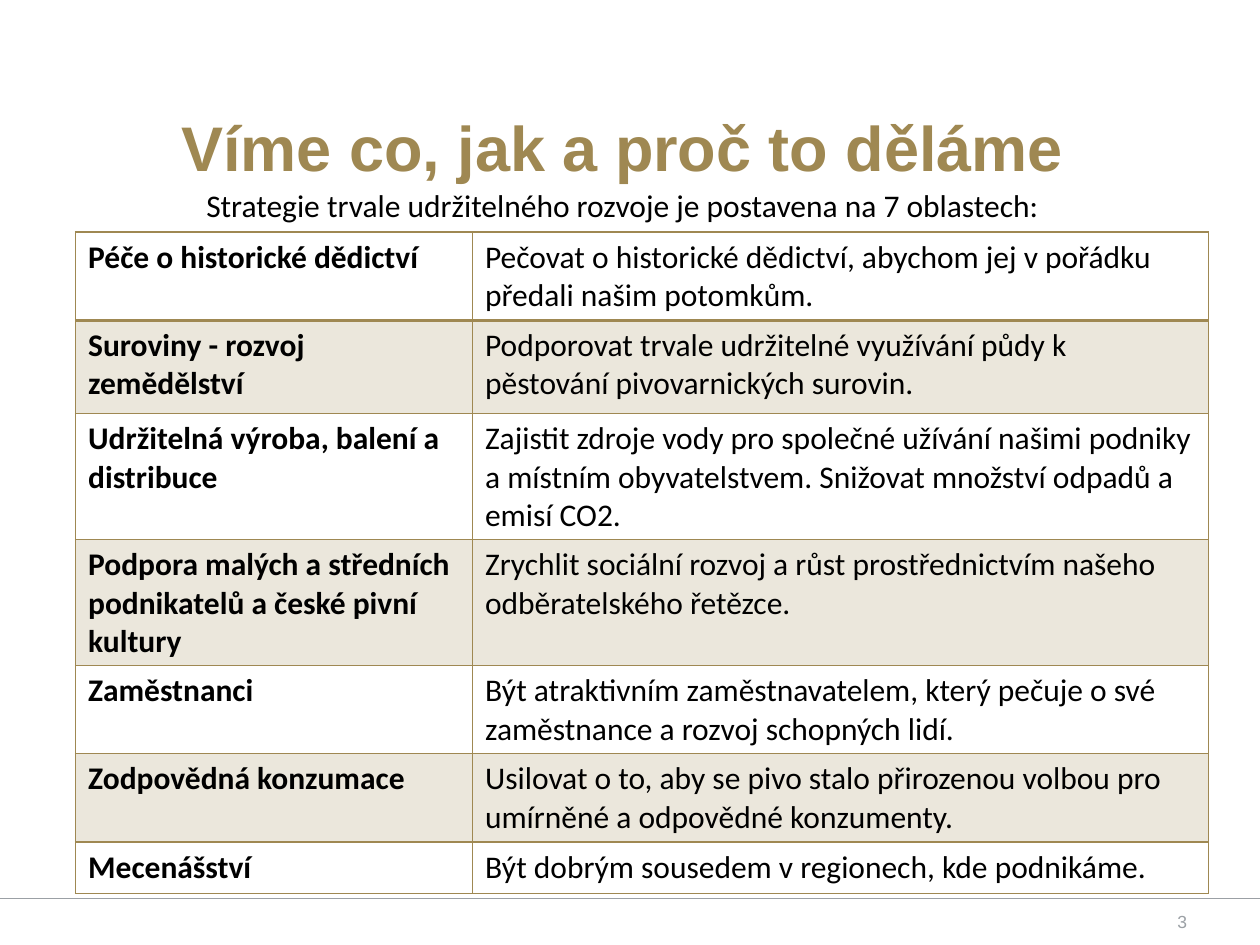
from lxml import etree
from pptx import Presentation
from pptx.dml.color import RGBColor
from pptx.enum.shapes import MSO_CONNECTOR
from pptx.enum.text import MSO_ANCHOR, PP_ALIGN
from pptx.oxml.ns import qn
from pptx.util import Inches, Pt

GOLD = RGBColor(0x9F, 0x88, 0x52)
GREY = RGBColor(0x9B, 0xA0, 0xA5)
BLACK = RGBColor(0x00, 0x00, 0x00)
TITLE_ONLY = 5
TOP, MIDDLE = MSO_ANCHOR.TOP, MSO_ANCHOR.MIDDLE
CENTER, RIGHT = PP_ALIGN.CENTER, PP_ALIGN.RIGHT
STRAIGHT = MSO_CONNECTOR.STRAIGHT

COLUMN_WIDTHS = (3.15, 5.84)
# Each row: height in inches, area, goal
AREAS = [
    (0.70, "Péče o historické dědictví",
     "Pečovat o historické dědictví, abychom jej v pořádku předali našim potomkům."),
    (0.74, "Suroviny - rozvoj zemědělství",
     "Podporovat trvale udržitelné využívání půdy k pěstování pivovarnických surovin."),
    (1.00, "Udržitelná výroba, balení a distribuce",
     "Zajistit zdroje vody pro společné užívání našimi podniky a místním obyvatelstvem. "
     "Snižovat množství odpadů a emisí CO2."),
    (1.00, "Podpora malých a středních podnikatelů a české pivní kultury",
     "Zrychlit sociální rozvoj a růst prostřednictvím našeho odběratelského řetězce."),
    (0.70, "Zaměstnanci",
     "Být atraktivním zaměstnavatelem, který pečuje o své zaměstnance a rozvoj schopných lidí."),
    (0.70, "Zodpovědná konzumace",
     "Usilovat o to, aby se pivo stalo přirozenou volbou pro umírněné a odpovědné konzumenty."),
    (0.41, "Mecenášství",
     "Být dobrým sousedem v regionech, kde podnikáme."),
]


def write(frame, text, size, font, color, bold=False, align=None):
    frame.word_wrap = True
    frame.text = text
    paragraph = frame.paragraphs[0]
    paragraph.alignment = align
    run_font = paragraph.runs[0].font
    run_font.size, run_font.name, run_font.bold = Pt(size), font, bold
    run_font.color.rgb = color


def add_title(slide, left, top, width, height):
    title = slide.shapes.title
    title.left, title.top, title.width, title.height = left, top, width, height
    frame = title.text_frame
    frame.vertical_anchor = TOP
    frame.margin_top = Inches(0.1)
    write(frame, "Víme co, jak a proč to děláme ", 36, "Arial", GOLD, True, CENTER)


def add_intro(slide, left, top, width, height):
    intro = slide.shapes.add_textbox(left, top, width, height)
    write(intro.text_frame,
          "Strategie trvale udržitelného rozvoje je postavena na 7 oblastech: ",
          18, "Calibri", BLACK, align=CENTER)


def set_borders(cell, bottom_width):
    """Draw gold lines on all sides; call before setting the fill."""
    properties = cell._tc.get_or_add_tcPr()
    for side, width in (("L", 1), ("R", 1), ("T", 1), ("B", bottom_width)):
        line = etree.SubElement(properties, qn(f"a:ln{side}"), w=str(Pt(width)))
        fill = etree.SubElement(line, qn("a:solidFill"))
        etree.SubElement(fill, qn("a:srgbClr"), val=str(GOLD))


def set_fill(cell, shaded):
    if not shaded:
        cell.fill.background()
        return
    cell.fill.solid()
    cell.fill.fore_color.rgb = GOLD
    color = cell._tc.tcPr.find(f"{qn('a:solidFill')}/{qn('a:srgbClr')}")
    etree.SubElement(color, qn("a:alpha"), val="20000")


def add_areas_table(slide, left, top, width, height):
    table = slide.shapes.add_table(
        len(AREAS), len(COLUMN_WIDTHS), left, top, width, height).table
    table.first_row = table.horz_banding = False
    for column, column_width in zip(table.columns, COLUMN_WIDTHS):
        column.width = Inches(column_width)
    for row_index, (row_height, *texts) in enumerate(AREAS):
        table.rows[row_index].height = Inches(row_height)
        for column_index, text in enumerate(texts):
            cell = table.cell(row_index, column_index)
            write(cell.text_frame, text, 18, "Calibri", BLACK, bold=column_index == 0)
            set_borders(cell, bottom_width=2 if row_index == 0 else 1)
            set_fill(cell, shaded=row_index % 2 == 1)


def add_footer(slide, left, top, width, height):
    rule = slide.shapes.add_connector(STRAIGHT, left, top, left + width, top)
    rule.line.color.rgb = GREY
    rule.line.width = Pt(0.75)
    etree.SubElement(rule._element.spPr, qn("a:effectLst"))

    number = slide.shapes.add_textbox(
        left + Inches(8.81), top + Inches(0.1), Inches(0.61), height - Inches(0.1))
    frame = number.text_frame
    frame.margin_left = frame.margin_right = frame.margin_top = frame.margin_bottom = 0
    frame.vertical_anchor = MIDDLE
    write(frame, "3", 10, "Arial", GREY, align=RIGHT)


def main():
    presentation = Presentation()
    presentation.slide_width, presentation.slide_height = Inches(10), Inches(7.5)
    slide = presentation.slides.add_slide(presentation.slide_layouts[TITLE_ONLY])
    add_footer(slide, 0, Inches(7.13), Inches(10), Inches(0.27))
    add_areas_table(slide, Inches(0.6), Inches(1.84), Inches(8.99), Inches(5.25))
    add_title(slide, Inches(0.51), Inches(0.76), Inches(9), Inches(0.94))
    add_intro(slide, Inches(0.6), Inches(1.43), Inches(8.74), Inches(0.4))
    presentation.save("out.pptx")


if __name__ == "__main__":
    main()
